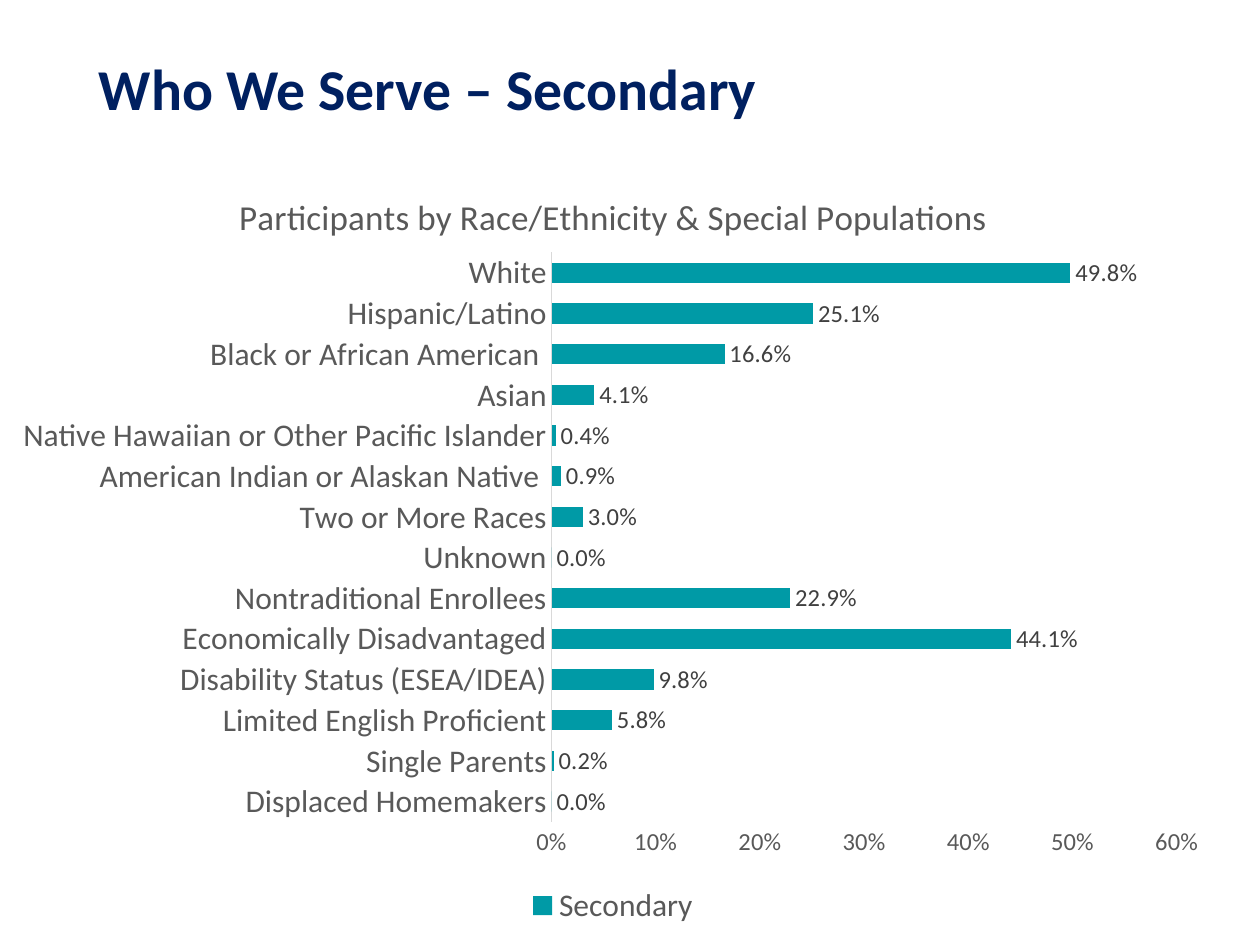
"""Build the slide on secondary participants by group."""
import pptx
import pptx.util
import pptx.chart.data
import pptx.enum.chart
import pptx.enum.text
import pptx.oxml
import pptx.oxml.ns
from pptx.dml.color import RGBColor

Pt = pptx.util.Pt
enum = pptx.enum.chart

HEAD = "Who We Serve – Secondary"
TITLE = "Participants by Race/Ethnicity & Special Populations"
SERIES = "Secondary"
GROUPS = [
    ("White", 0.498),
    ("Hispanic/Latino", 0.251),
    ("Black or African American ", 0.166),
    ("Asian", 0.041),
    ("Native Hawaiian or Other Pacific Islander", 0.004),
    ("American Indian or Alaskan Native ", 0.009),
    ("Two or More Races", 0.03),
    ("Unknown", 0),
    ("Nontraditional Enrollees", 0.229),
    ("Economically Disadvantaged", 0.441),
    ("Disability Status (ESEA/IDEA)", 0.098),
    ("Limited English Proficient", 0.058),
    ("Single Parents", 0.002),
    ("Displaced Homemakers", 0),
]
COLORS = {"navy": "002060", "teal": "009AA6", "gray": "595959",
          "dark": "404040", "rule": "D9D9D9"}
FONT = "Calibri"


def color(name):
    return RGBColor.from_string(COLORS[name])


def style(font, size, tone, bold=False):
    font.name, font.size, font.bold = FONT, Pt(size), bold
    font.color.rgb = color(tone)


def write(frame, text, size, tone, bold=False, space=None):
    para = frame.paragraphs[0]
    para.line_spacing = space
    run = para.add_run()
    run.text = text
    style(run.font, size, tone, bold)


def place(part, inner=False, **spots):
    old = part.find(pptx.oxml.ns.qn("c:layout"))
    if old is not None:
        part.remove(old)
    target = '<c:layoutTarget val="inner"/>' if inner else ""
    modes = "".join(f'<c:{k}Mode val="edge"/>' for k in "xy")
    vals = "".join(f'<c:{k} val="{v}"/>' for k, v in spots.items())
    node = pptx.oxml.parse_xml(
        f'<c:layout {pptx.oxml.ns.nsdecls("c")}><c:manualLayout>'
        f'{target}{modes}{vals}</c:manualLayout></c:layout>')
    part.insert(0 if inner else 1, node)


deck = pptx.Presentation()
deck.slide_width, deck.slide_height = Pt(720), Pt(540)
slide = deck.slides.add_slide(deck.slide_layouts[6])

box = slide.shapes.add_textbox(Pt(49.5), Pt(0), Pt(621), Pt(104.4))
box.text_frame.word_wrap = True
box.text_frame.vertical_anchor = pptx.enum.text.MSO_ANCHOR.MIDDLE
write(box.text_frame, HEAD, 33, "navy", bold=True, space=0.9)

data = pptx.chart.data.CategoryChartData(number_format="0.0%")
names, vals = zip(*reversed(GROUPS))
data.categories = names
data.add_series(SERIES, vals)
chart = slide.shapes.add_chart(
    enum.XL_CHART_TYPE.BAR_CLUSTERED,
    Pt(0), Pt(86.4), Pt(700.5), Pt(445.7), data).chart
style(chart.font, 18, "gray")

chart.has_title = True
write(chart.chart_title.text_frame, TITLE, 20, "gray")
chart.chart_title.include_in_layout = False
place(chart.chart_title._element, x=0.19, y=0.045)

chart.has_legend = True
chart.legend.position = enum.XL_LEGEND_POSITION.BOTTOM
chart.legend.include_in_layout = False
style(chart.legend.font, 18, "gray")

for axis, size in ((chart.category_axis, 18), (chart.value_axis, 14)):
    axis.has_major_gridlines = False
    axis.major_tick_mark = axis.minor_tick_mark = enum.XL_TICK_MARK.NONE
    style(axis.tick_labels.font, size, "gray")
rule = chart.category_axis.format.line
rule.color.rgb, rule.width = color("rule"), Pt(0.75)
scale = chart.value_axis
scale.format.line.fill.background()
scale.minimum_scale, scale.maximum_scale, scale.major_unit = 0, 0.6, 0.1
scale.tick_labels.number_format = "0%"
scale.tick_labels.number_format_is_linked = False

plot = chart.plots[0]
plot.gap_width, plot.vary_by_categories = 100, False
bars = plot.series[0]
bars.format.fill.solid()
bars.format.fill.fore_color.rgb = color("teal")
tags = bars.data_labels
tags.show_value = True
tags.position = enum.XL_LABEL_POSITION.OUTSIDE_END
tags.number_format, tags.number_format_is_linked = "0.0%", False
style(tags.font, 14, "dark")
place(chart._chartSpace.chart.plotArea, inner=True,
      x=0.45, y=0.13, w=0.51, h=0.73)

deck.save("out.pptx")
